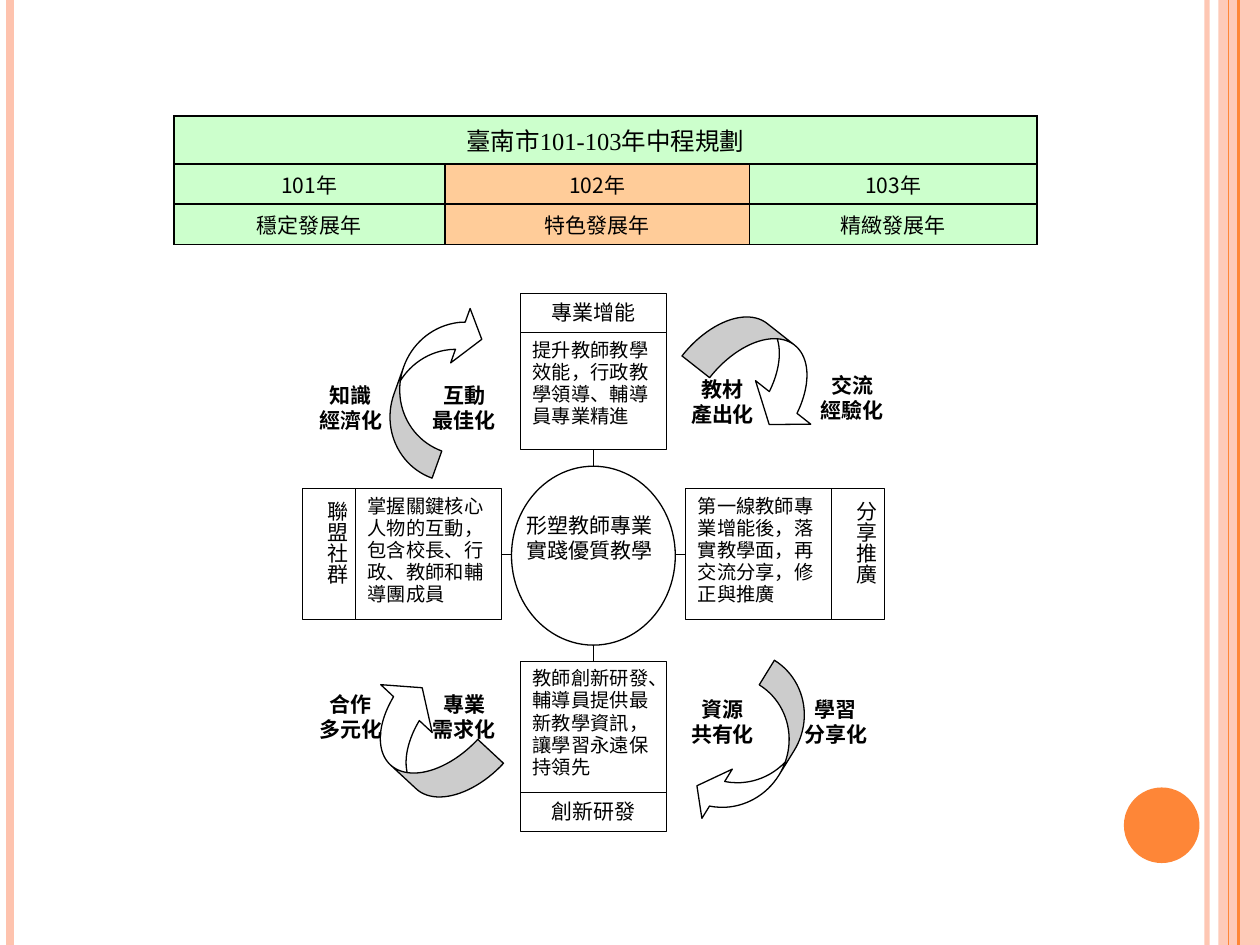
"""Builds the 101-103 mid-term plan slide: a table above a cycle of four teaching boxes."""
from lxml import etree
from pptx import Presentation
from pptx.dml.color import RGBColor
from pptx.enum.shapes import MSO_CONNECTOR, MSO_SHAPE
from pptx.enum.text import MSO_ANCHOR, PP_ALIGN
from pptx.oxml.ns import qn
from pptx.util import Pt

PX = 9144
RECT, OVAL, ARROW = MSO_SHAPE.RECTANGLE, MSO_SHAPE.OVAL, MSO_SHAPE.CURVED_LEFT_ARROW
STRAIGHT = MSO_CONNECTOR.STRAIGHT
LEFT, CENTER, JUSTIFY = PP_ALIGN.LEFT, PP_ALIGN.CENTER, PP_ALIGN.JUSTIFY
TOP, MIDDLE = MSO_ANCHOR.TOP, MSO_ANCHOR.MIDDLE
CJK, LATIN, SERIF = "Noto Sans CJK SC", "Calibri", "Times New Roman"
COLORS = {"ink": "000000", "paper": "FFFFFF", "pink": "FEC3AE",
          "orange": "FE8637", "green": "CCFFCC", "peach": "FFCC99"}


def write(tf, text, size, font=CJK, align=LEFT, bold=False, spacing=None):
    tf.text = text
    for p in tf.paragraphs:
        p.alignment = align
        if spacing:
            p.line_spacing = Pt(spacing)
        for r in p.runs:
            r.font.size = Pt(size)
            r.font.name = font
            r.font.bold = bold
            r.font.color.rgb = RGBColor.from_string(COLORS["ink"])
            etree.SubElement(r.font._element, qn("a:ea"), typeface=CJK)


def add_box(kind, box, fill, line=None):
    sp = s.shapes.add_shape(kind, *[v * PX for v in box])
    sp.shadow.inherit = False
    sp.fill.solid()
    sp.fill.fore_color.rgb = RGBColor.from_string(COLORS[fill])
    if line:
        sp.line.color.rgb = RGBColor.from_string(COLORS[line])
        sp.line.width = Pt(0.75)
    else:
        sp.line.fill.background()
    return sp


prs = Presentation()
prs.slide_width, prs.slide_height = 1000 * PX, 750 * PX
s = prs.slides.add_slide(prs.slide_layouts[6])

band = add_box(RECT, (967, 0, 33, 750), "pink")
lines = [
    (958, 0, 958, 750, "pink", 3, 93),
    (8, 0, 8, 750, "pink", 4.5, 100),
    (983, 0, 983, 750, "orange", 1.5, 100),
    (975, 0, 975, 750, "orange", 0.75, 100),
    (471, 355, 471, 542, "ink", 0.75, 100),
    (356, 440, 574, 440, "ink", 0.75, 100),
]
translucent = [(band, 87)]
for x1, y1, x2, y2, color, width, alpha in lines:
    cx = s.shapes.add_connector(STRAIGHT, x1 * PX, y1 * PX, x2 * PX, y2 * PX)
    cx.line.color.rgb = RGBColor.from_string(COLORS[color])
    cx.line.width = Pt(width)
    etree.SubElement(cx._element.spPr, qn("a:effectLst"))
    if alpha < 100:
        translucent.append((cx, alpha))
for sp, alpha in translucent:
    clr = next(sp._element.spPr.iter(qn("a:srgbClr")))
    etree.SubElement(clr, qn("a:alpha"), val=str(alpha * 1000))

add_box(OVAL, (892, 625, 60, 60), "orange")

boxes = [
    ((282, 388, 116, 104), "掌握關鍵核心人物的互動，包含校長、行政、教師和輔導團成員", 11, LEFT, False),
    ((413, 264, 116, 93), "提升教師教學效能，行政教學領導、輔導員專業精進", 11, LEFT, False),
    ((544, 388, 116, 104), "第一線教師專業增能後，落實教學面，再交流分享，修正與推廣", 11, LEFT, False),
    ((413, 525, 116, 104), "教師創新研發、輔導員提供最新教學資訊，讓學習永遠保持領先", 11, LEFT, False),
    ((240, 388, 42, 104), "聯盟社群", 12, JUSTIFY, True),
    ((660, 388, 42, 104), "分享推廣", 12, LEFT, True),
    ((413, 629, 116, 31), "創新研發", 12, CENTER, False),
    ((413, 233, 116, 31), "專業增能", 12, CENTER, False),
]
for box, text, size, align, vertical in boxes:
    tf = add_box(RECT, box, "paper", "ink").text_frame
    tf.word_wrap = True
    tf.vertical_anchor = TOP
    write(tf, text, size, align=align, spacing=12.6 if size == 11 else 14)
    if vertical:
        tf._txBody.bodyPr.set("vert", "eaVert")

add_box(OVAL, (406, 370, 130, 142), "paper", "ink")

arrows = [
    ((574, 527, 51, 140), 31.7),
    ((305, 531, 62, 116), 132.9),
    ((317, 235, 51, 140), 199.7),
    ((575, 236, 62, 116), 308.2),
]
for box, angle in arrows:
    sp = add_box(ARROW, box, "paper", "ink")
    sp.rotation = angle
    for i, value in enumerate((0.45, 0.9, 0.333)):
        sp.adjustments[i] = round(value, 3)

labels = [
    ((408, 402, 127, 76), "形塑教師專業\n實踐優質教學", CJK, LEFT),
    ((625, 548, 77, 62), "學習\n分享化", LATIN, CENTER),
    ((240, 544, 77, 62), "合作\n多元化", LATIN, CENTER),
    ((240, 299, 77, 62), "知識\n經濟化", LATIN, CENTER),
    ((638, 291, 77, 62), "交流\n經驗化", LATIN, CENTER),
    ((535, 294, 77, 62), "教材\n產出化", LATIN, CENTER),
    ((330, 299, 77, 62), "互動\n最佳化", LATIN, CENTER),
    ((330, 544, 77, 62), "專業\n需求化", LATIN, CENTER),
    ((535, 548, 77, 62), "資源\n共有化", LATIN, CENTER),
]
for box, text, font, align in labels:
    tf = s.shapes.add_textbox(*[v * PX for v in box]).text_frame
    tf.word_wrap = True
    write(tf, text, 12, font, align, font == LATIN, 14.3)

rows = [
    ["臺南市101-103年中程規劃", "", ""],
    ["101年", "102年", "103年"],
    ["穩定發展年", "特色發展年", "精緻發展年"],
]
col_widths, row_heights = (215, 242, 228), (38, 32, 32)
table = s.shapes.add_table(3, 3, 138 * PX, 92 * PX, sum(col_widths) * PX,
                           sum(row_heights) * PX).table
for col, width in zip(table.columns, col_widths):
    col.width = width * PX
for row, height in zip(table.rows, row_heights):
    row.height = height * PX
table.cell(0, 0).merge(table.cell(0, 2))
for i, texts in enumerate(rows):
    for j, text in enumerate(texts):
        cell = table.cell(i, j)
        cell.margin_left = cell.margin_right = cell.margin_top = cell.margin_bottom = 0
        cell.vertical_anchor = MIDDLE
        write(cell.text_frame, text, 12 if i else 14, CJK if i else SERIF, CENTER)
        tcPr = cell._tc.get_or_add_tcPr()
        for side in ("a:lnL", "a:lnR", "a:lnT", "a:lnB"):
            ln = etree.SubElement(tcPr, qn(side), w=str(Pt(1)))
            fill = etree.SubElement(ln, qn("a:solidFill"))
            etree.SubElement(fill, qn("a:srgbClr"), val=COLORS["ink"])
        cell.fill.solid()
        color = "peach" if i and j == 1 else "green"
        cell.fill.fore_color.rgb = RGBColor.from_string(COLORS[color])

prs.save("out.pptx")
